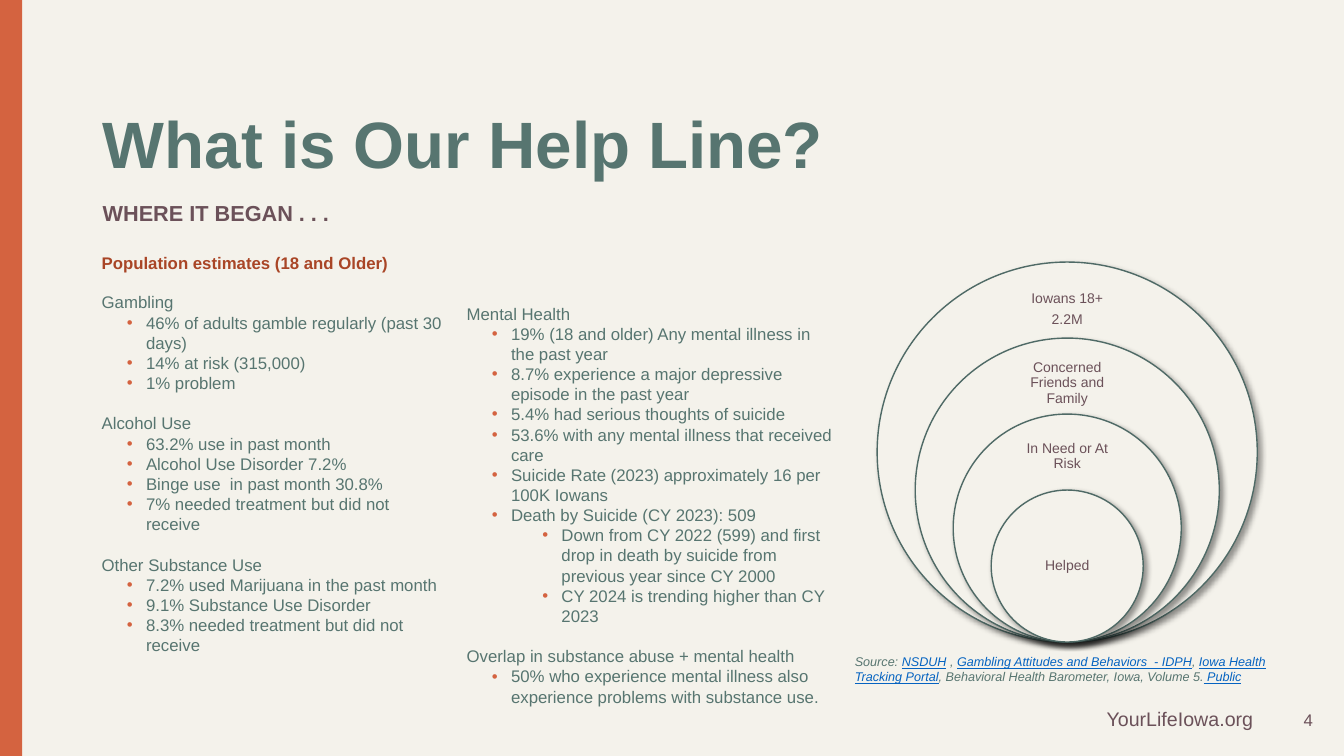
"""Build the population estimates slide."""
from collections import namedtuple
from dataclasses import dataclass

from lxml import etree
from pptx import Presentation
from pptx import util as u
from pptx.dml.color import RGBColor
from pptx.enum import shapes, text
from pptx.oxml import ns, parse_xml

Box = namedtuple("Box", "x y w h")
LEFT, MID, RIGHT = text.PP_ALIGN.LEFT, text.PP_ALIGN.CENTER, text.PP_ALIGN.RIGHT
TOP, HALF = text.MSO_ANCHOR.TOP, text.MSO_ANCHOR.MIDDLE


@dataclass(frozen=True)
class Theme:
    """Colours, type sizes and font of the slide."""
    paper: str = "F4F2EB"
    teal: str = "577570"
    plum: str = "6B5159"
    rust: str = "A94526"
    coral: str = "D46340"
    ring: str = "4F6A66"
    link: str = "0563C1"
    face: str = "Arial"
    title: float = 46.8
    lead: float = 15.5
    site: float = 14
    body: float = 12
    label: float = 10
    note: float = 9


THEME = Theme()
INDENT = {1: 0.44, 2: 0.94}
HANG = 0.19

GAMBLE = [
    (0, "Gambling"),
    (1, "46% of adults gamble regularly (past 30 days)"),
    (1, "14% at risk (315,000)"),
    (1, "1% problem"),
    (0, "Alcohol Use"),
    (1, "63.2% use in past month"),
    (1, "Alcohol Use Disorder 7.2%"),
    (1, "Binge use  in past month 30.8%"),
    (1, "7% needed treatment but did not receive"),
    (0, "Other Substance Use"),
    (1, "7.2% used Marijuana in the past month"),
    (1, "9.1% Substance Use Disorder"),
    (1, "8.3% needed treatment but did not receive"),
]
MENTAL = [
    (0, "Mental Health"),
    (1, "19% (18 and older) Any mental illness in the past year"),
    (1, "8.7% experience a major depressive episode in the past year"),
    (1, "5.4% had serious thoughts of suicide"),
    (1, "53.6% with any mental illness that received care"),
    (1, "Suicide Rate (2023) approximately 16 per 100K Iowans"),
    (1, "Death by Suicide (CY 2023): 509"),
    (2, "Down from CY 2022 (599) and first drop in death by suicide "
        "from previous year since CY 2000"),
    (2, "CY 2024 is trending higher than CY 2023"),
    (0, "Overlap in substance abuse + mental health"),
    (1, "50% who experience mental illness also experience problems "
        "with substance use."),
]
RINGS = [
    (["Iowans 18+", "2.2M"], 0.47),
    (["Concerned Friends and Family"], 0.45),
    (["In Need or At Risk"], 0.42),
    (["Helped"], 0.75),
]
SOURCE = [
    ("Source: ", False), ("NSDUH", True), (" , ", False),
    ("Gambling Attitudes and Behaviors  - IDPH", True), (", ", False),
    ("Iowa Health Tracking Portal", True),
    (", Behavioral Health Barometer, Iowa, Volume 5.", False),
    (" Public", True),
]


def tint(code):
    """Return the colour for a hex code."""
    return RGBColor.from_string(code)


def bullet(para, level):
    """Give a paragraph a hanging coral bullet."""
    props = para._p.get_or_add_pPr()
    props.set("marL", str(u.Inches(INDENT[level])))
    props.set("indent", str(-u.Inches(HANG)))
    props.set("lvl", str(level - 1))
    hue = etree.SubElement(props, ns.qn("a:buClr"))
    etree.SubElement(hue, ns.qn("a:srgbClr"), val=THEME.coral)
    etree.SubElement(props, ns.qn("a:buFont"), typeface=THEME.face)
    etree.SubElement(props, ns.qn("a:buChar"), char="•")


def write(shape, rows, size=THEME.body, color=THEME.teal, bold=False, slant=False,
          align=LEFT, anchor=TOP, lead=None, gap=0, after=0, inset=None):
    """Fill a shape with rows of level and text, or level and runs."""
    frame = shape.text_frame
    frame.word_wrap = True
    frame.auto_size = text.MSO_AUTO_SIZE.NONE
    frame.vertical_anchor = anchor
    if inset is not None:
        frame.margin_left = frame.margin_right = u.Inches(inset)
        frame.margin_top = frame.margin_bottom = u.Inches(inset)
    for i, (level, runs) in enumerate(rows):
        para = frame.add_paragraph() if i else frame.paragraphs[0]
        if level:
            bullet(para, level)
        para.alignment = align
        para.space_before = u.Pt(gap if i and not level else 0)
        para.space_after = u.Pt(after)
        if lead:
            para.line_spacing = lead
        for words, link in [(runs, False)] if isinstance(runs, str) else runs:
            run = para.add_run()
            run.text = words
            font = run.font
            font.name, font.size = THEME.face, u.Pt(size)
            font.bold, font.italic, font.underline = bold, slant, link
            font.color.rgb = tint(THEME.link if link else color)


def label(parent, box, rows, **form):
    """Add a text box and write in it."""
    write(parent.add_textbox(*map(u.Inches, box)), rows, **form)


def head(slide, box):
    """Place the title and the line below it."""
    title = slide.shapes.title
    title.left, title.top = u.Inches(box.x), u.Inches(box.y)
    title.width, title.height = u.Inches(box.w), u.Inches(0.77)
    write(title, [(0, "What is Our Help Line?")], size=THEME.title, bold=True,
          anchor=HALF, lead=0.9)
    label(slide.shapes, Box(box.x, box.y + 0.9, box.w, 0.33),
          [(0, "WHERE IT BEGAN . . .")], size=THEME.lead, color=THEME.plum,
          bold=True, lead=0.8)


def facts(slide, box):
    """Place the estimates in two columns under their heading."""
    label(slide.shapes, Box(box.x, box.y, 4.04, 0.49),
          [(0, "Population estimates (18 and Older)")],
          color=THEME.rust, bold=True)
    label(slide.shapes, Box(box.x, box.y + 0.39, 3.62, 3.74), GAMBLE, gap=14.4)
    label(slide.shapes, Box(box.x + 3.62, box.y + 0.5, box.w - 3.62, 4.64),
          MENTAL, gap=14.4)


def shade(shape):
    """Give a shape a soft shadow to the lower right."""
    shape._element.spPr.append(parse_xml(
        f'<a:effectLst {ns.nsdecls("a")}><a:outerShdw blurRad="{u.Pt(4)}" '
        f'dist="{u.Pt(3)}" dir="2700000" algn="tl" rotWithShape="0">'
        '<a:srgbClr val="000000"><a:alpha val="40000"/></a:srgbClr>'
        '</a:outerShdw></a:effectLst>'))


def rings(slide, box):
    """Place nested circles that share their lowest point."""
    group = slide.shapes.add_group_shape().shapes
    for i, (lines, drop) in enumerate(RINGS):
        size = box.w * (1 - 0.2 * i)
        top = box.y + box.h - size
        ring = group.add_shape(
            shapes.MSO_SHAPE.OVAL, u.Inches(box.x + (box.w - size) / 2),
            u.Inches(top), u.Inches(size), u.Inches(size))
        ring.fill.solid()
        ring.fill.fore_color.rgb = tint(THEME.paper)
        ring.line.color.rgb = tint(THEME.ring)
        ring.line.width = u.Pt(1)
        shade(ring)
        label(group, Box(box.x + box.w / 2 - 0.53, top + drop - 0.28, 1.06, 0.56),
              [(0, line) for line in lines], size=THEME.label, color=THEME.plum,
              align=MID, anchor=HALF, lead=0.9, after=4.2, inset=0.08)


def foot(slide, box):
    """Place the source, the web address and the slide number."""
    label(slide.shapes, Box(box.x, box.y, 4.71, 0.5), [(0, SOURCE)],
          size=THEME.note, slant=True)
    label(slide.shapes, Box(box.x + 2.05, box.y + 0.52, 2.1, 0.34),
          [(0, "YourLifeIowa.org")], size=THEME.site, color=THEME.plum, align=RIGHT)
    label(slide.shapes, Box(box.x + box.w - 0.68, box.y + 0.5, 0.68, 0.4),
          [(0, "4")], color=THEME.plum, align=RIGHT, anchor=HALF)


def edge(slide, box):
    """Paint the paper and the coral bar on the left."""
    back = slide.background.fill
    back.solid()
    back.fore_color.rgb = tint(THEME.paper)
    bar = slide.shapes.add_shape(shapes.MSO_SHAPE.RECTANGLE, *map(u.Inches, box))
    bar.shadow.inherit = False
    bar.fill.solid()
    bar.fill.fore_color.rgb = tint(THEME.coral)
    bar.line.fill.background()


def main():
    """Build and save the deck."""
    deck = Presentation()
    deck.slide_width, deck.slide_height = u.Inches(13.33), u.Inches(7.5)
    slide = deck.slides.add_slide(deck.slide_layouts[5])
    edge(slide, Box(0, 0, 0.22, 7.5))
    head(slide, Box(0.92, 1.08, 11.5, 1.23))
    facts(slide, Box(0.91, 2.46, 7.47, 5.14))
    rings(slide, Box(8.7, 2.6, 3.77, 3.77))
    foot(slide, Box(8.38, 6.44, 4.74, 0.9))
    deck.save("out.pptx")


if __name__ == "__main__":
    main()
